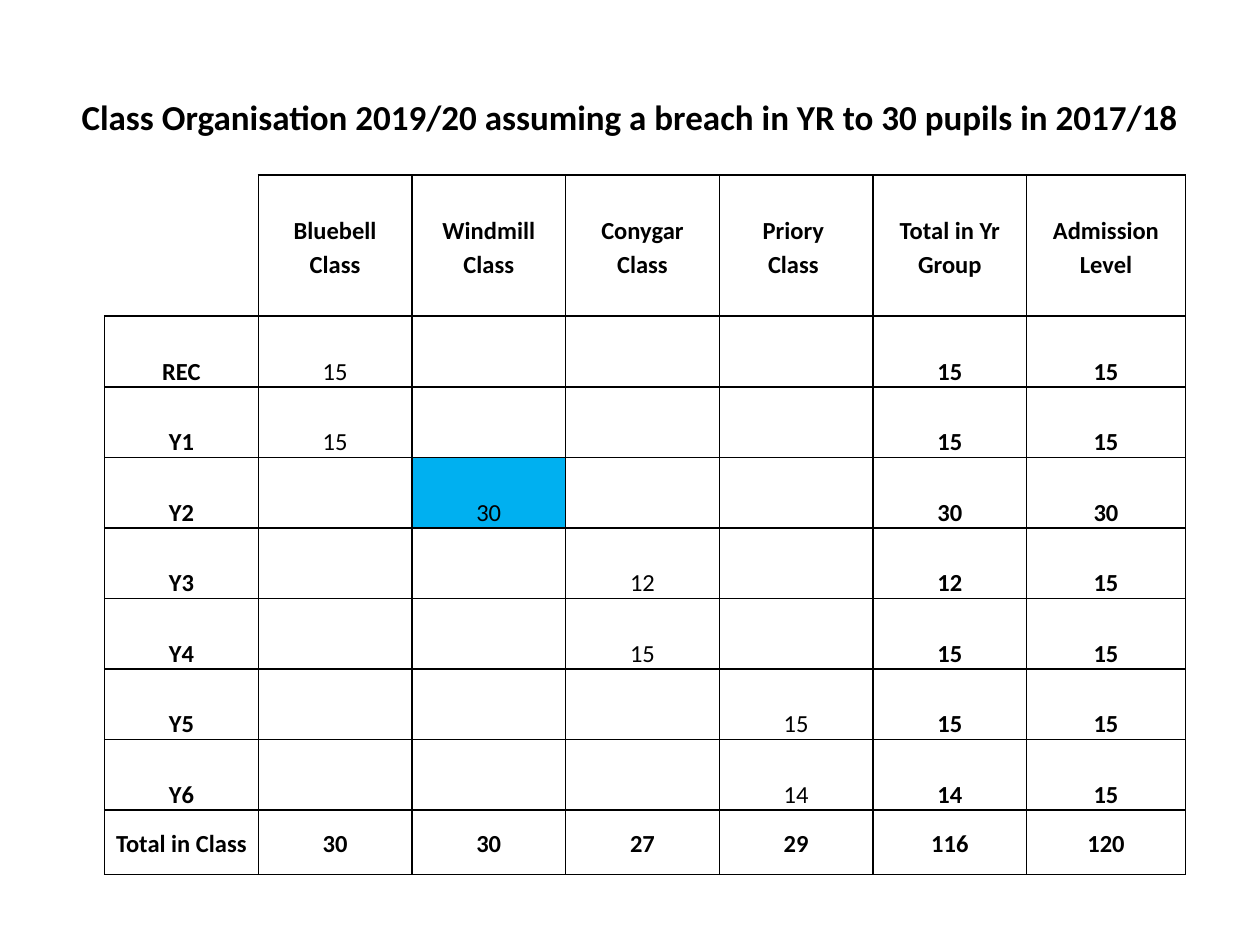
from lxml.etree import SubElement
from pptx import Presentation
from pptx.dml.color import RGBColor
from pptx.enum.text import MSO_ANCHOR as Anchor, PP_ALIGN as Align
from pptx.oxml.ns import qn
from pptx.util import Inches, Pt

BLACK, BLUE = "000000", "00B0F0"
TITLE = "Class Organisation 2019/20 assuming a breach in YR to 30 pupils in 2017/18"
HEADERS = ["Bluebell Class", "Windmill Class", "Conygar Class",
           "Priory \nClass ", "Total in Yr Group", "Admission Level"]
CLASS_COUNT = 4
# Year group, class index, pupils, admission level
YEARS = [("REC", 0, 15, 15), ("Y1", 0, 15, 15), ("Y2", 1, 30, 30),
         ("Y3", 2, 12, 15), ("Y4", 2, 15, 15), ("Y5", 3, 15, 15),
         ("Y6", 3, 14, 15)]
COL_WIDTHS = [1.22] * 6 + [1.26]
ROW_HEIGHTS = [0.56] * 9 + [0.51]
HEADER_ROWS = 2


def rgb(color):
    return RGBColor.from_string(color)


def write(tf, text, size=14, bold=True, color=BLACK, spacing=1.15):
    for i, line in enumerate(text.split("\n")):
        p = tf.add_paragraph() if i else tf.paragraphs[0]
        p.alignment = Align.CENTER
        p.line_spacing = spacing
        r = p.add_run()
        r.text = line
        r.font.name = "Calibri"
        r.font.size = Pt(size)
        r.font.bold = bold
        r.font.color.rgb = rgb(color)


def set_borders(cell, sides):
    """Draw the given sides (letters of LRTB) and clear the others."""
    tc_pr = cell._tc.get_or_add_tcPr()
    for side in "LRTB":
        ln = SubElement(tc_pr, qn(f"a:ln{side}"), w=str(Pt(1)))
        if side in sides:
            fill = SubElement(ln, qn("a:solidFill"))
            SubElement(fill, qn("a:srgbClr"), val=BLACK)
        else:
            SubElement(ln, qn("a:noFill"))


def fill_cell(cell, text, anchor=Anchor.BOTTOM, **fmt):
    cell.vertical_anchor = anchor
    cell.margin_left = cell.margin_right = Inches(0.07)
    cell.margin_top = cell.margin_bottom = 0
    write(cell.text_frame, text, **fmt)


def add_title(slide):
    tf = slide.shapes.add_textbox(Inches(0.5), Inches(0.3),
                                  Inches(9), Inches(1.25)).text_frame
    tf.word_wrap = True
    tf.vertical_anchor = Anchor.MIDDLE
    write(tf, TITLE, size=20, spacing=1)


def add_grid(slide):
    """Add the empty bordered table, open at its top left corner."""
    table = slide.shapes.add_table(
        len(ROW_HEIGHTS), len(COL_WIDTHS), Inches(0.83), Inches(1.39),
        Inches(sum(COL_WIDTHS)), Inches(sum(ROW_HEIGHTS))).table
    table.first_row = table.horz_banding = False
    for col, width in zip(table.columns, COL_WIDTHS):
        col.width = Inches(width)
    for row, height in zip(table.rows, ROW_HEIGHTS):
        row.height = Inches(height)
    corner_sides = {(0, 0): "R", (1, 0): "RB"}
    for r in range(len(ROW_HEIGHTS)):
        for c in range(len(COL_WIDTHS)):
            cell = table.cell(r, c)
            set_borders(cell, corner_sides.get((r, c), "LRTB"))
            cell.fill.background()
    return table


def add_class_table(slide):
    table = add_grid(slide)
    for c, header in enumerate(HEADERS, 1):
        cell = table.cell(0, c)
        cell.merge(table.cell(HEADER_ROWS - 1, c))
        fill_cell(cell, header, Anchor.MIDDLE)

    totals = [0] * len(HEADERS)
    for r, (year, group, pupils, admission) in enumerate(YEARS, HEADER_ROWS):
        fill_cell(table.cell(r, 0), year)
        for i, value in ((group, pupils), (CLASS_COUNT, pupils),
                         (CLASS_COUNT + 1, admission)):
            fill_cell(table.cell(r, i + 1), str(value), bold=i >= CLASS_COUNT)
            totals[i] += value
        if year == "Y2":
            highlight = table.cell(r, group + 1).fill
            highlight.solid()
            highlight.fore_color.rgb = rgb(BLUE)

    for c, text in enumerate(["Total in Class", *totals]):
        fill_cell(table.cell(len(ROW_HEIGHTS) - 1, c), str(text), Anchor.MIDDLE)


def main():
    prs = Presentation()
    prs.slide_width, prs.slide_height = Inches(10), Inches(7.5)
    slide = prs.slides.add_slide(prs.slide_layouts[6])
    add_title(slide)
    add_class_table(slide)
    prs.save("out.pptx")


if __name__ == "__main__":
    main()
